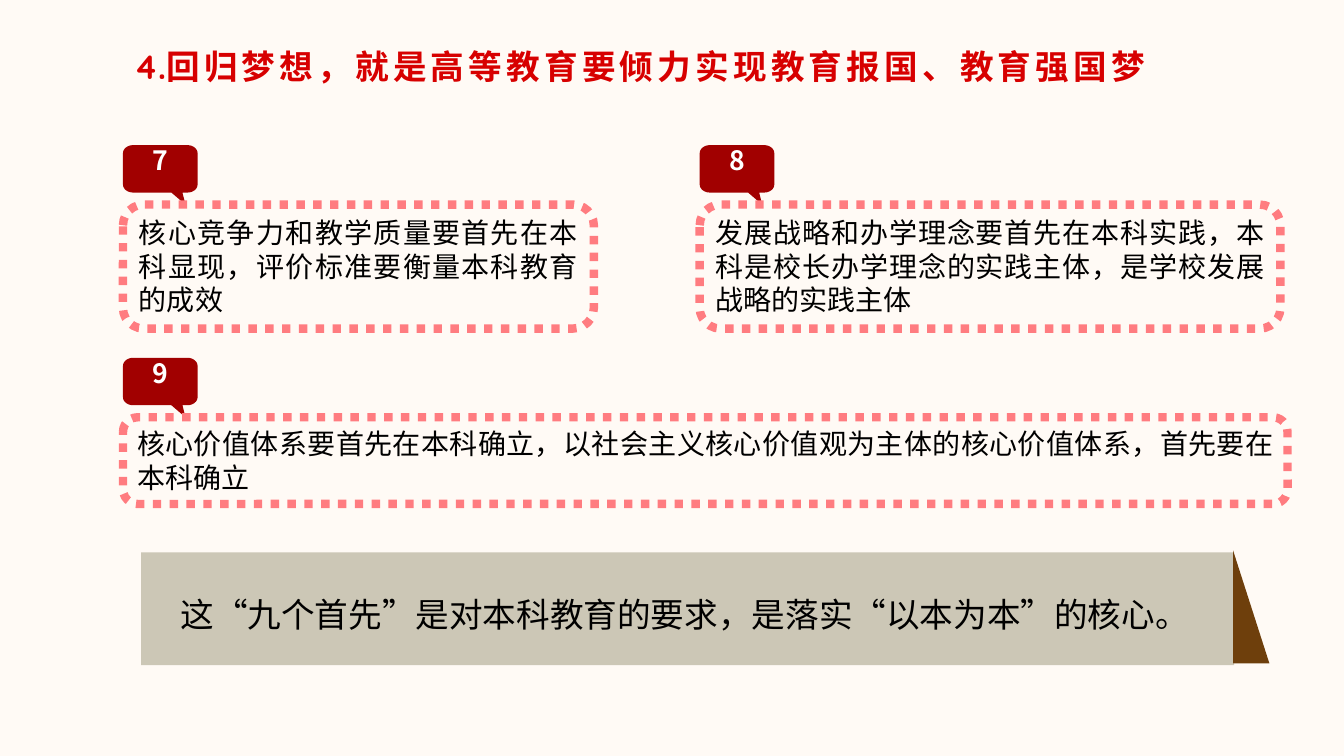
import math
from pptx import Presentation
from pptx import util as u
from pptx.dml.color import RGBColor
from pptx.enum import dml, shapes, text
from pptx.oxml.ns import qn
from lxml import etree

TITLE = [("4.", "Quicksand", 0), ("回归梦想，就是高等教育要倾力实现教育报国、教育强国梦", "Noto Sans CJK SC", 300)]
ITEMS = [
    ("7", "核心竞争力和教学质量要首先在本科显现，评价标准要衡量本科教育的成效", (122, 203, 467, 123)),
    ("8", "发展战略和办学理念要首先在本科实践，本科是校长办学理念的实践主体，是学校发展战略的实践主体", (694, 203, 576, 123)),
    ("9", "核心价值体系要首先在本科确立，以社会主义核心价值观为主体的核心价值体系，首先要在本科确立", (122, 414, 1155, 86)),
]
CLOSE = "这“九个首先”是对本科教育的要求，是落实“以本为本”的核心。"
FONT = "Noto Sans CJK SC"
HEX = {"page": "FFFAF5", "title": "D70000", "tag": "A10000", "dots": "FF7C80",
       "bar": "CCC7B6", "fold": "6E3F0C", "ink": "000000", "white": "FFFFFF"}
TAG_W, TAG_H, TAIL = 74, 47, 12
PX = 9144


def px(*vals):
    return [round(v * PX) for v in vals]


def color(name):
    return RGBColor.from_string(HEX[name])


def write(shape, runs, size, ink="ink", bold=False, align="JUSTIFY", anchor="MIDDLE",
          inset=(10, 5, 10, 5), lead=1.0):
    frame = shape.text_frame
    frame.word_wrap = True
    frame.auto_size = text.MSO_AUTO_SIZE.NONE
    frame.vertical_anchor = text.MSO_ANCHOR[anchor]
    frame.margin_left, frame.margin_top, frame.margin_right, frame.margin_bottom = px(*inset)
    para = frame.paragraphs[0]
    para.alignment = text.PP_ALIGN[align]
    para.line_spacing = lead
    para.space_before = u.Pt(0)
    for words, face, gap in runs:
        run = para.add_run()
        run.text = words
        font = run.font
        font.name, font.size, font.bold = face, u.Pt(size), bold
        font.color.rgb = color(ink)
        props = run._r.get_or_add_rPr()
        etree.SubElement(props, qn("a:ea")).set("typeface", face)
        if gap:
            props.set("spc", str(gap))


def style(shape, fill=None, line=None):
    shape.shadow.inherit = False
    if fill:
        shape.fill.solid()
        shape.fill.fore_color.rgb = color(fill)
    else:
        shape.fill.background()
    if line:
        shape.line.color.rgb = color(line)
        shape.line.width = u.Pt(6)
        shape.line.dash_style = dml.MSO_LINE.ROUND_DOT
    else:
        shape.line.fill.background()
    return shape


def block(slide, kind, place, **look):
    return style(slide.shapes.add_shape(shapes.MSO_SHAPE[kind], *px(*place)), **look)


def arc(x, y, start, rx=10, ry=8, steps=8):
    turns = [math.radians(start + 90 * i / steps) for i in range(steps + 1)]
    return [(x + rx * math.cos(t), y + ry * math.sin(t)) for t in turns]


def bubble(slide, x, y):
    right, base = x + TAG_W, y + TAG_H
    dots = arc(right - 10, y + 8, -90) + arc(right - 10, base - 8, 0)
    dots += [(x + 59, base), (x + 62, base + TAIL), (x + 48, base)]
    dots += arc(x + 10, base - 8, 90) + arc(x + 10, y + 8, 180)
    dots = [px(*dot) for dot in dots]
    form = slide.shapes.build_freeform(*dots[0], scale=1.0)
    form.add_line_segments(dots[1:], close=True)
    return style(form.convert_to_shape(), fill="tag")


def main():
    deck = Presentation()
    deck.slide_width, deck.slide_height = px(1333, 750)
    slide = deck.slides.add_slide(deck.slide_layouts[5])
    slide.background.fill.solid()
    slide.background.fill.fore_color.rgb = color("page")

    title = slide.shapes.title
    title.left, title.top, title.width, title.height = px(123, 41, 1043, 50)
    write(title, TITLE, 24, ink="title", bold=True, align="LEFT")

    for num, words, place in ITEMS:
        tag = bubble(slide, place[0], place[1] - TAG_H - TAIL)
        write(tag, [(num, FONT, 0)], 19, ink="white", bold=True, align="CENTER",
              inset=(10, 5, 10, 28), lead=0.8)
        box = block(slide, "ROUNDED_RECTANGLE", place, line="dots")
        write(box, [(words, FONT, 0)], 20, anchor="TOP")

    bar = block(slide, "RECTANGLE", (140, 548, 1084, 112), fill="bar")
    write(bar, [(CLOSE, FONT, 0)], 24, inset=(39, 24, 39, 24), lead=1.25)
    block(slide, "RIGHT_TRIANGLE", (1223, 546, 36, 112), fill="fold")
    deck.save("out.pptx")


if __name__ == "__main__":
    main()
